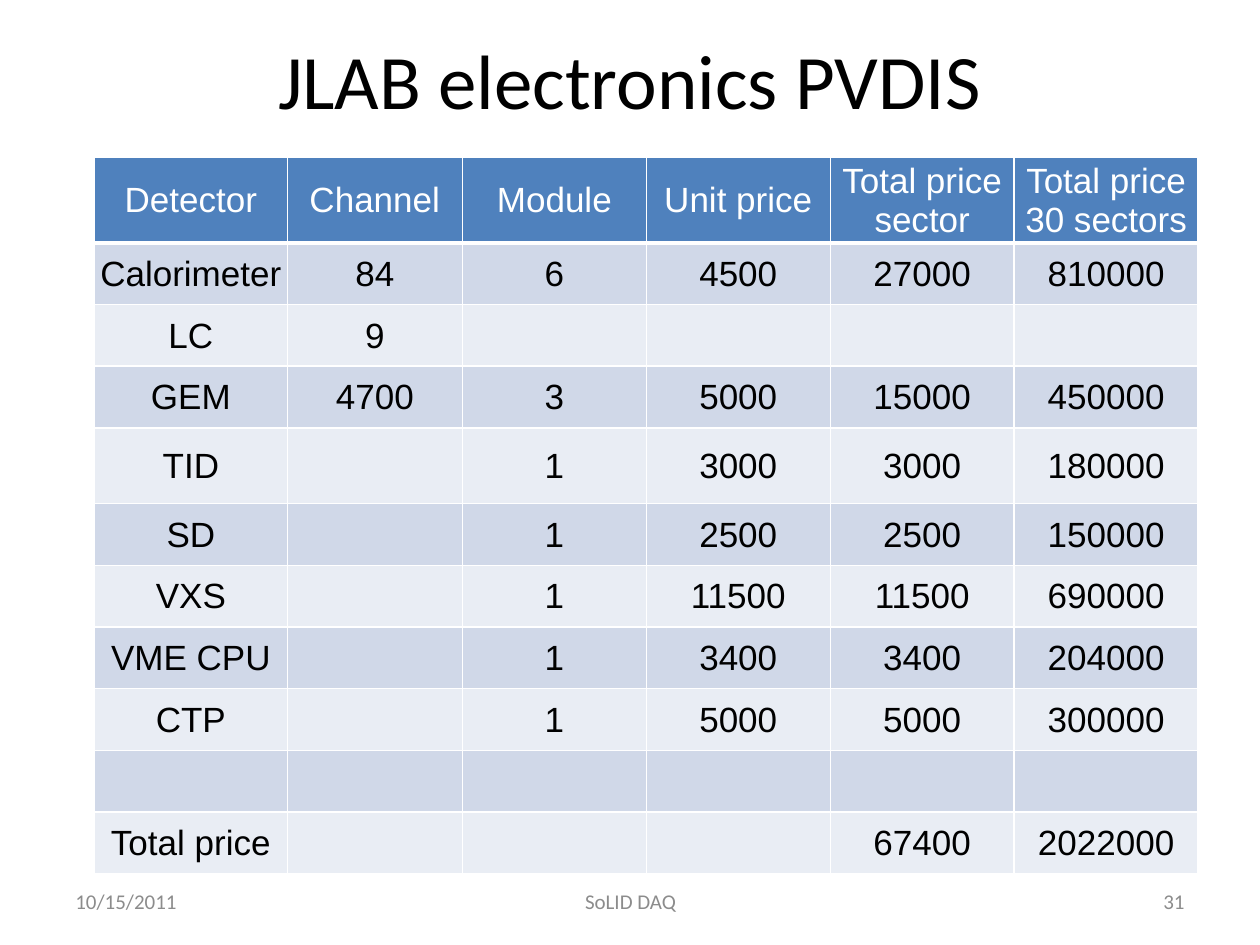
from pptx import Presentation
from pptx.dml.color import RGBColor
from pptx.enum.text import MSO_ANCHOR as Anchor, PP_ALIGN as Align
from pptx.util import Inches, Pt
from lxml.etree import SubElement
from pptx.oxml.ns import qn

BLACK = RGBColor(0x00, 0x00, 0x00)
WHITE = RGBColor(0xFF, 0xFF, 0xFF)
GRAY = RGBColor(0x8C, 0x8C, 0x8C)
BLUE = RGBColor(0x4F, 0x81, 0xBD)
BANDS = [RGBColor(0xE9, 0xED, 0xF4), RGBColor(0xD0, 0xD8, 0xE8)]

ROWS = [
    ["Detector", "Channel", "Module", "Unit price", "Total price sector", "Total price 30 sectors"],
    ["Calorimeter", "84", "6", "4500", "27000", "810000"],
    ["LC", "9", "", "", "", ""],
    ["GEM", "4700", "3", "5000", "15000", "450000"],
    ["TID", "", "1", "3000", "3000", "180000"],
    ["SD", "", "1", "2500", "2500", "150000"],
    ["VXS", "", "1", "11500", "11500", "690000"],
    ["VME CPU", "", "1", "3400", "3400", "204000"],
    ["CTP", "", "1", "5000", "5000", "300000"],
    ["", "", "", "", "", ""],
    ["Total price", "", "", "", "67400", "2022000"],
]
WIDTHS = [1.53, 1.39, 1.46, 1.46, 1.46, 1.46]
HEIGHTS = [0.61, 0.49, 0.49, 0.49, 0.6] + [0.49] * 6


def style(frame, size, font, color, align):
    para = frame.paragraphs[0]
    para.alignment = align
    for run in para.runs:
        run.font.size = Pt(size)
        run.font.name = font
        run.font.bold = False
        run.font.color.rgb = color


def border(cell, side, width):
    line = SubElement(cell._tc.get_or_add_tcPr(), qn("a:ln" + side), w=str(Pt(width)))
    fill = SubElement(line, qn("a:solidFill"))
    SubElement(fill, qn("a:srgbClr"), val=str(WHITE))


prs = Presentation()
prs.slide_width, prs.slide_height = Inches(10), Inches(7.5)
slide = prs.slides.add_slide(prs.slide_layouts[6])

# Title and footer
for text, left, top, width, height, size, color, align in [
    ("JLAB electronics PVDIS", 0.5, 0, 9, 1.25, 44, BLACK, Align.CENTER),
    ("10/15/2011", 0.5, 6.95, 2.33, 0.4, 12, GRAY, Align.LEFT),
    ("SoLID DAQ", 3.42, 6.95, 3.17, 0.4, 12, GRAY, Align.CENTER),
    ("31", 7.17, 6.95, 2.33, 0.4, 12, GRAY, Align.RIGHT),
]:
    box = slide.shapes.add_textbox(Inches(left), Inches(top), Inches(width), Inches(height))
    frame = box.text_frame
    frame.word_wrap = True
    frame.vertical_anchor = Anchor.MIDDLE
    frame.text = text
    style(frame, size, "Calibri", color, align)

# Price table
table = slide.shapes.add_table(
    len(ROWS), len(WIDTHS), Inches(0.75), Inches(1.25),
    Inches(sum(WIDTHS)), Inches(sum(HEIGHTS))).table
for col, width in zip(table.columns, WIDTHS):
    col.width = Inches(width)
for row, height in zip(table.rows, HEIGHTS):
    row.height = Inches(height)

for r, row in enumerate(ROWS):
    for c, text in enumerate(row):
        cell = table.cell(r, c)
        cell.text = text
        cell.vertical_anchor = Anchor.MIDDLE
        cell.margin_left = cell.margin_right = cell.margin_top = Inches(0.01)
        cell.margin_bottom = 0
        style(cell.text_frame, 20, "Arial", BLACK if r else WHITE, Align.CENTER)
        # The rule under the header is thicker than the rest
        border(cell, "L", 1)
        border(cell, "R", 1)
        border(cell, "T", 3 if r == 1 else 1)
        border(cell, "B", 3 if r == 0 else 1)
        cell.fill.solid()
        cell.fill.fore_color.rgb = BANDS[r % 2] if r else BLUE

prs.save("out.pptx")
